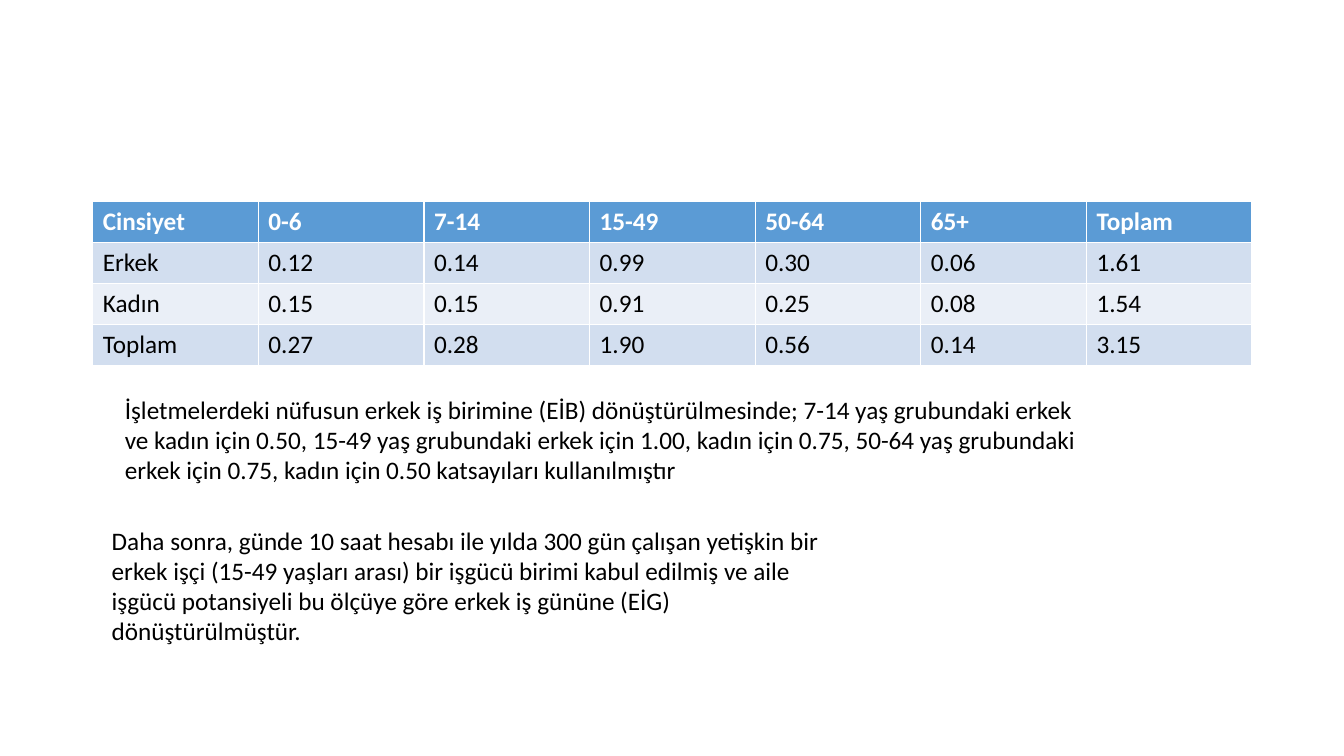
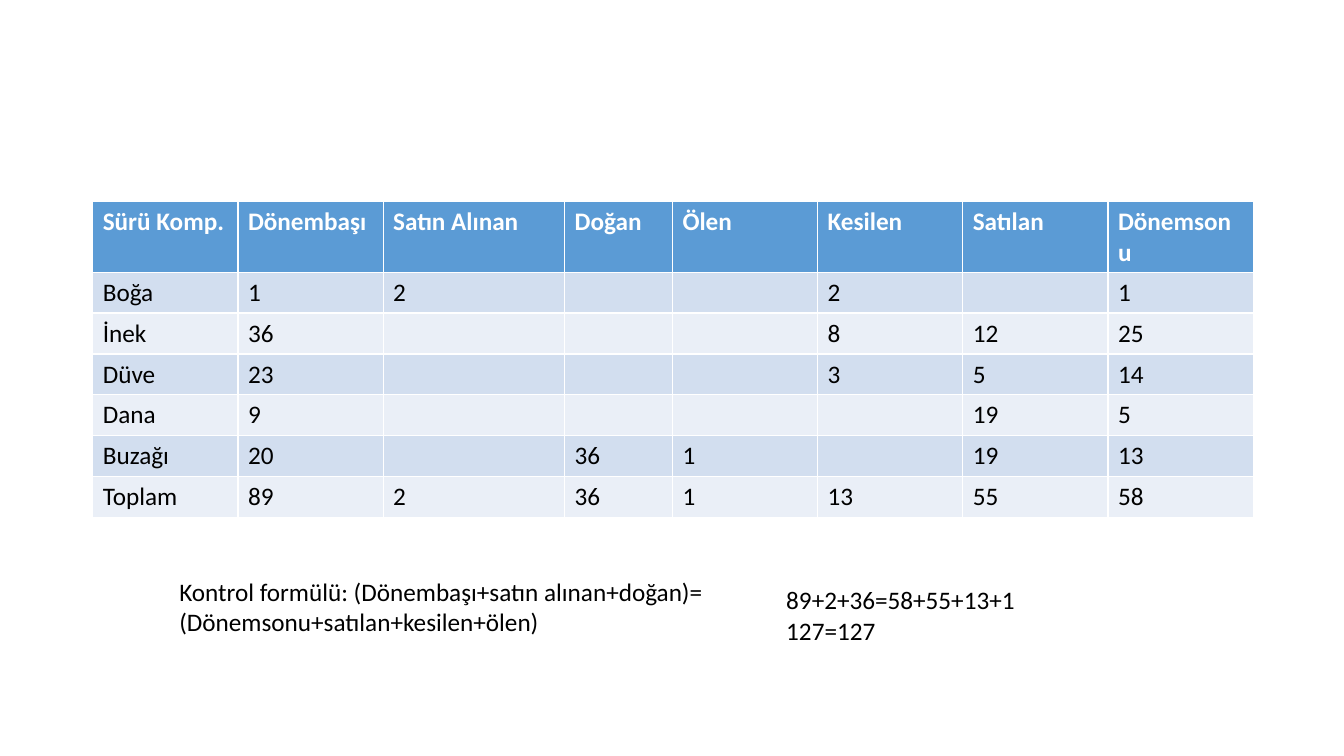
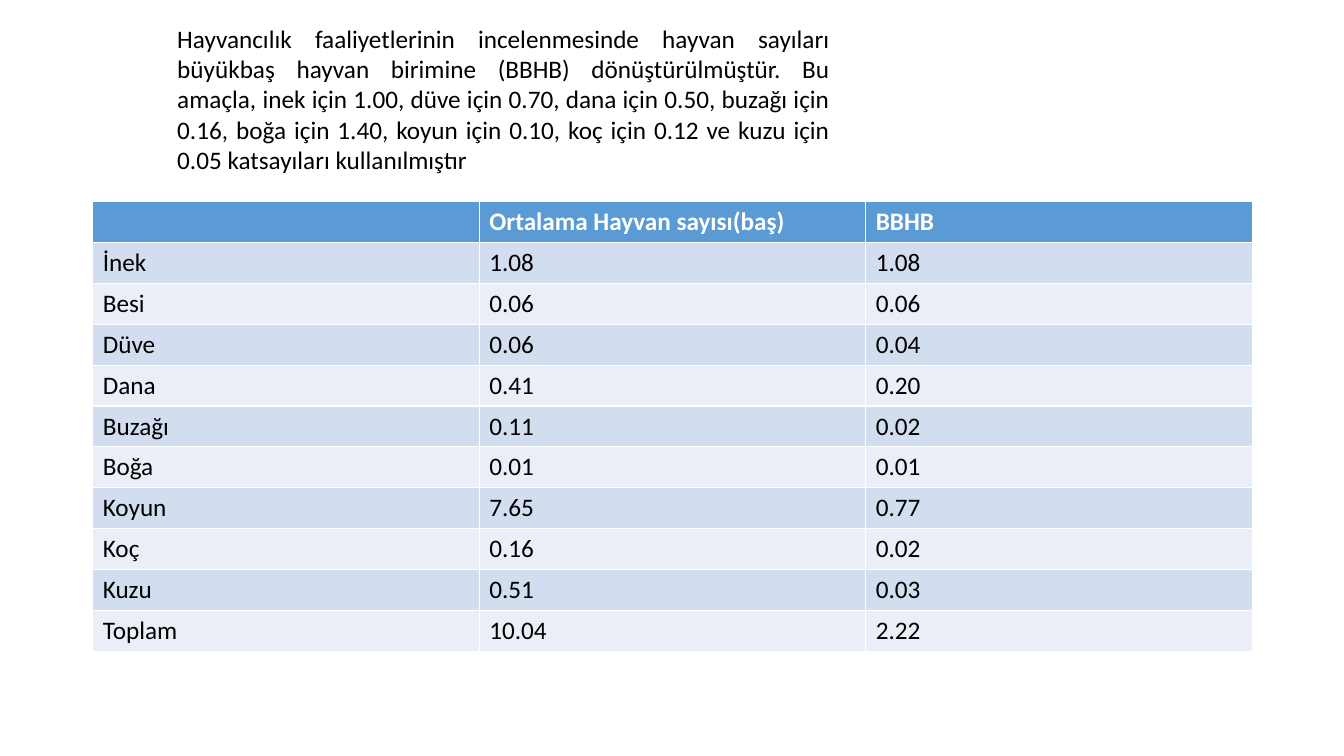
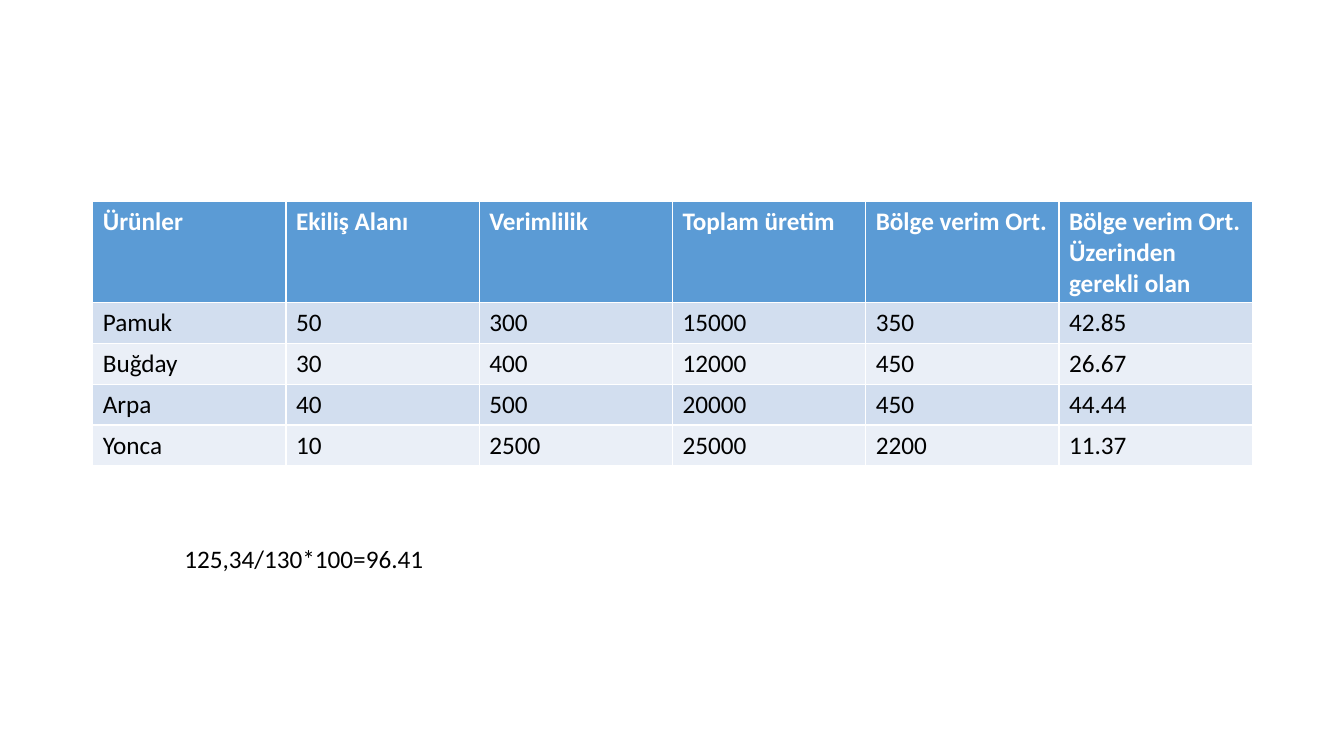
"""Build four slides of farm survey tables with explanatory notes."""
import pptx
import pptx.dml.color
import pptx.enum.text
import pptx.util

Inches = pptx.util.Inches
RGBColor = pptx.dml.color.RGBColor
ALIGN = pptx.enum.text.PP_ALIGN

WHITE = RGBColor(0xFF, 0xFF, 0xFF)
BLACK = RGBColor(0x00, 0x00, 0x00)
HEADER_BLUE = RGBColor(0x5B, 0x9B, 0xD5)
BAND_DARK = RGBColor(0xD2, 0xDE, 0xEF)
BAND_LIGHT = RGBColor(0xEA, 0xEF, 0xF7)

BODY_FONT = {"name": "Calibri", "size": pptx.util.Pt(18), "bold": False}
HEADER_FONT = {**BODY_FONT, "bold": True}

TABLE_LEFT, TABLE_TOP, TABLE_WIDTH = Inches(0.92), Inches(2), Inches(11.5)
ROW_HEIGHT = pptx.util.Pt(29.2)

SLIDES = [
    {
        "rows": [
            ["Cinsiyet", "0-6", "7-14", "15-49", "50-64", "65+", "Toplam"],
            ["Erkek", "0.12", "0.14", "0.99", "0.30", "0.06", "1.61"],
            ["Kadın", "0.15", "0.15", "0.91", "0.25", "0.08", "1.54"],
            ["Toplam", "0.27", "0.28", "1.90", "0.56", "0.14", "3.15"],
        ],
        "notes": [
            ((1.14, 3.86, 9.76, 1.01), ALIGN.LEFT, [
                "İşletmelerdeki nüfusun erkek iş birimine (EİB) dönüştürülmesinde; "
                "7-14 yaş grubundaki erkek ve kadın için 0.50, 15-49 yaş grubundaki "
                "erkek için 1.00, kadın için 0.75, 50-64 yaş grubundaki erkek için "
                "0.75, kadın için 0.50 katsayıları kullanılmıştır"]),
            ((1.01, 5.16, 7.47, 1.31), ALIGN.LEFT, [
                "Daha sonra, günde 10 saat hesabı ile yılda 300 gün çalışan yetişkin "
                "bir erkek işçi (15-49 yaşları arası) bir işgücü birimi kabul edilmiş "
                "ve aile işgücü potansiyeli bu ölçüye göre erkek iş gününe (EİG) "
                "dönüştürülmüştür."]),
        ],
    },
    {
        "widths": [1.44, 1.44, 1.8, 1.07, 1.44, 1.44, 1.44, 1.44],
        "rows": [
            ["Sürü Komp.", "Dönembaşı", "Satın Alınan", "Doğan", "Ölen",
             "Kesilen", "Satılan", "Dönemsonu"],
            ["Boğa", "1", "2", "", "", "2", "", "1"],
            ["İnek", "36", "", "", "", "8", "12", "25"],
            ["Düve", "23", "", "", "", "3", "5", "14"],
            ["Dana", "9", "", "", "", "", "19", "5"],
            ["Buzağı", "20", "", "36", "1", "", "19", "13"],
            ["Toplam", "89", "2", "36", "1", "13", "55", "58"],
        ],
        "notes": [
            ((1.68, 5.67, 5.48, 0.71), ALIGN.LEFT, [
                "Kontrol formülü: (Dönembaşı+satın alınan+doğan)= "
                "(Dönemsonu+satılan+kesilen+ölen)"]),
            ((7.7, 5.75, 4.47, 0.71), ALIGN.LEFT, [
                "89+2+36=58+55+13+1", "127=127"]),
        ],
    },
    {
        "rows": [
            ["", "Ortalama Hayvan sayısı(baş)", "BBHB"],
            ["İnek", "1.08", "1.08"],
            ["Besi", "0.06", "0.06"],
            ["Düve", "0.06", "0.04"],
            ["Dana", "0.41", "0.20"],
            ["Buzağı", "0.11", "0.02"],
            ["Boğa", "0.01", "0.01"],
            ["Koyun", "7.65", "0.77"],
            ["Koç", "0.16", "0.02"],
            ["Kuzu", "0.51", "0.03"],
            ["Toplam", "10.04", "2.22"],
        ],
        "notes": [
            ((1.66, 0.18, 6.67, 1.62), ALIGN.JUSTIFY, [
                "Hayvancılık faaliyetlerinin incelenmesinde hayvan sayıları büyükbaş "
                "hayvan birimine (BBHB) dönüştürülmüştür. Bu amaçla, inek için 1.00, "
                "düve için 0.70, dana için 0.50, buzağı için 0.16, boğa için 1.40, "
                "koyun için 0.10, koç için 0.12 ve kuzu için 0.05 katsayıları "
                "kullanılmıştır"]),
        ],
    },
    {
        "rows": [
            ["Ürünler", "Ekiliş Alanı", "Verimlilik", "Toplam üretim",
             "Bölge verim Ort.", "Bölge verim Ort. Üzerinden gerekli olan"],
            ["Pamuk", "50", "300", "15000", "350", "42.85"],
            ["Buğday", "30", "400", "12000", "450", "26.67"],
            ["Arpa", "40", "500", "20000", "450", "44.44"],
            ["Yonca", "10", "2500", "25000", "2200", "11.37"],
        ],
        "notes": [
            ((1.73, 5.34, 4.25, 0.4), ALIGN.LEFT, ["125,34/130*100=96.41"]),
        ],
    },
]


def add_span(para, text, font_values, color):
    """Append a formatted run to a paragraph."""
    span = para.add_run()
    span.text = text
    for name, value in font_values.items():
        setattr(span.font, name, value)
    span.font.color.rgb = color


deck = pptx.Presentation()
deck.slide_width, deck.slide_height = Inches(13.33), Inches(7.5)
blank_layout = deck.slide_layouts.get_by_name("Blank")

for content in SLIDES:
    page = deck.slides.add_slide(blank_layout)
    rows = content["rows"]
    table = page.shapes.add_table(
        len(rows), len(rows[0]), TABLE_LEFT, TABLE_TOP,
        TABLE_WIDTH, ROW_HEIGHT * len(rows)).table
    for column, width in zip(table.columns, content.get("widths", [])):
        column.width = Inches(width)

    for row_index, row in enumerate(rows):
        if row_index == 0:
            fill, font_values, color = HEADER_BLUE, HEADER_FONT, WHITE
        else:
            fill = BAND_DARK if row_index % 2 else BAND_LIGHT
            font_values, color = BODY_FONT, BLACK
        for column_index, text in enumerate(row):
            cell = table.cell(row_index, column_index)
            cell.fill.solid()
            cell.fill.fore_color.rgb = fill
            if text:
                add_span(cell.text_frame.paragraphs[0], text, font_values, color)

    for place, alignment, lines in content["notes"]:
        box = page.shapes.add_textbox(*map(Inches, place))
        frame = box.text_frame
        frame.word_wrap = True
        frame.auto_size = pptx.enum.text.MSO_AUTO_SIZE.SHAPE_TO_FIT_TEXT
        for line_index, line in enumerate(lines):
            para = frame.add_paragraph() if line_index else frame.paragraphs[0]
            para.alignment = alignment
            add_span(para, line, BODY_FONT, BLACK)

deck.save("out.pptx")
